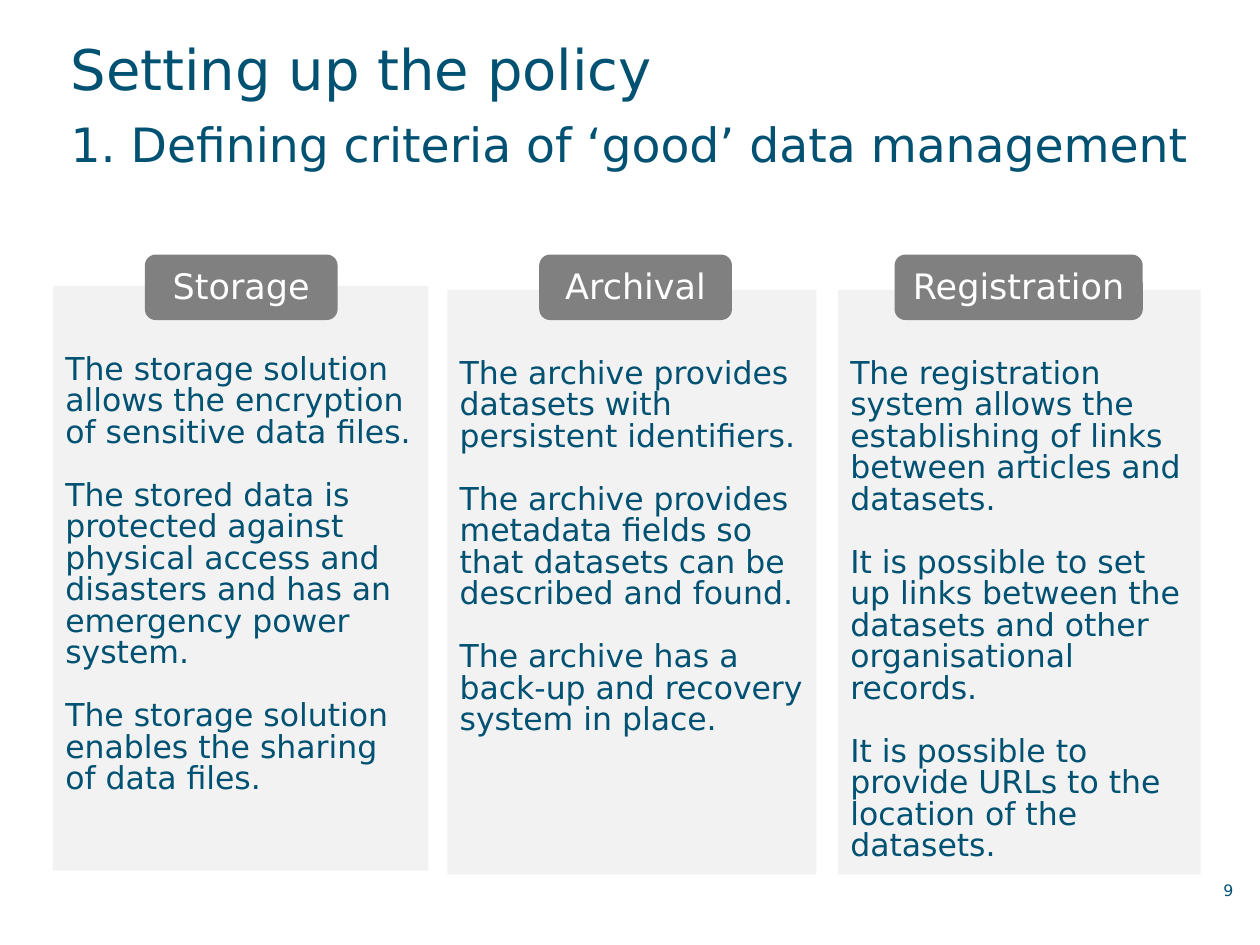
from dataclasses import dataclass

from pptx import Presentation
from pptx.dml.color import RGBColor as RGB
from pptx.enum.shapes import MSO_SHAPE as SHAPE
from pptx.enum.text import MSO_ANCHOR as ANCHOR, MSO_AUTO_SIZE as AUTO, PP_ALIGN as ALIGN
from pptx.util import Inches, Pt


@dataclass(frozen=True)
class Theme:
    font: str = "DejaVu Sans"
    ink: str = "005172"
    panel: str = "F2F2F2"
    label: str = "808080"
    label_ink: str = "FFFFFF"
    title_size: int = 32
    subtitle_size: int = 27
    label_size: int = 20
    body_size: int = 18
    number_size: int = 9


COLS, ROWS = 100, 75  # grid cells across and down the slide


class Deck:
    def __init__(self, theme):
        self.theme = theme
        self.prs = Presentation()
        self.prs.slide_width, self.prs.slide_height = Inches(10), Inches(7.5)
        self.slide = self.prs.slides.add_slide(self.prs.slide_layouts[5])

    def box(self, col, row, cols, rows):
        w, h = self.prs.slide_width / COLS, self.prs.slide_height / ROWS
        return [round(v) for v in (col * w, row * h, cols * w, rows * h)]

    def frame(self, sp, insets, anchor=ANCHOR.TOP):
        tf = sp.text_frame
        sides = ("margin_left", "margin_top", "margin_right", "margin_bottom")
        values = dict(zip(sides, map(Inches, insets)))
        values.update(word_wrap=True, auto_size=AUTO.NONE, vertical_anchor=anchor)
        for name, value in values.items():
            setattr(tf, name, value)
        return tf

    def format(self, p, **values):
        for name, value in values.items():
            setattr(p, name, value)

    def run(self, p, text, size, color):
        r = p.add_run()
        r.text = text
        for name, value in {"name": self.theme.font, "size": Pt(size)}.items():
            setattr(r.font, name, value)
        r.font.color.rgb = RGB.from_string(color)

    def shape(self, kind, area, fill):
        sp = self.slide.shapes.add_shape(kind, *self.box(*area))
        sp.shadow.inherit = False
        sp.fill.solid()
        sp.fill.fore_color.rgb = RGB.from_string(fill)
        sp.line.fill.background()
        return sp

    def title(self, area, heading, subheading):
        t, sp = self.theme, self.slide.shapes.title
        sp.left, sp.top, sp.width, sp.height = self.box(*area)
        p = self.frame(sp, (0.02, 0, 0.1, 0.35)).paragraphs[0]
        self.format(p, alignment=ALIGN.LEFT, line_spacing=Pt(40))
        self.run(p, heading, t.title_size, t.ink)
        p.add_line_break()
        self.run(p, subheading, t.subtitle_size, t.ink)

    def panel(self, area, texts):
        t = self.theme
        sp = self.shape(SHAPE.RECTANGLE, area, t.panel)
        # The top inset leaves two lines free below the label
        tf = self.frame(sp, (0.1, 0.55, 0.1, 0.05))
        for i, text in enumerate(texts):
            p = tf.add_paragraph() if i else tf.paragraphs[0]
            self.format(p, alignment=ALIGN.LEFT, line_spacing=Pt(t.body_size),
                        space_before=Pt(t.body_size if i else 0))
            self.run(p, text, t.body_size, t.ink)

    def label(self, area, text):
        t = self.theme
        sp = self.shape(SHAPE.ROUNDED_RECTANGLE, area, t.label)
        p = self.frame(sp, (0.1, 0.05, 0.1, 0.08), ANCHOR.MIDDLE).paragraphs[0]
        self.format(p, alignment=ALIGN.CENTER)
        self.run(p, text, t.label_size, t.label_ink)

    def number(self, area, text):
        t = self.theme
        sp = self.slide.shapes.add_textbox(*self.box(*area))
        p = self.frame(sp, (0.1, 0, 0.04, 0)).paragraphs[0]
        self.format(p, alignment=ALIGN.RIGHT, line_spacing=Pt(12))
        self.run(p, text, t.number_size, t.ink)


# Each criterion: label, label column and width, panel column, row and width, texts
CRITERIA = [
    ("Storage", (11.5, 15.3), (4.2, 22.7, 29.8), [
        "The storage solution allows the encryption of sensitive data files.",
        "The stored data is protected against physical access and disasters "
        "and has an emergency power system.",
        "The storage solution enables the sharing of data files.",
    ]),
    ("Archival", (42.8, 15.3), (35.5, 23, 29.3), [
        "The archive provides datasets with persistent identifiers.",
        "The archive provides metadata fields so that datasets can be "
        "described and found.",
        "The archive has a back-up and recovery system in place.",
    ]),
    ("Registration", (71, 19.7), (66.5, 23, 28.8), [
        "The registration system allows the establishing of links between "
        "articles and datasets.",
        "It is possible to set up links between the datasets and other "
        "organisational records.",
        "It is possible to provide URLs to the location of the datasets.",
    ]),
]
PANEL_ROWS, LABEL_ROW, LABEL_ROWS = 46.4, 20.2, 5.2


def main():
    deck = Deck(Theme())
    deck.title((5.4, 2.5, 92.3, 14.8), "Setting up the policy",
               "1. Defining criteria of ‘good’ data management")

    # Criteria panels, each with its label over the top edge
    for name, (label_col, label_cols), (col, row, cols), texts in CRITERIA:
        deck.panel((col, row, cols, PANEL_ROWS), texts)
        deck.label((label_col, LABEL_ROW, label_cols, LABEL_ROWS), name)

    # Slide number
    deck.number((93.2, 69.7, 5.1, 1.8), "9")
    deck.prs.save("out.pptx")


if __name__ == "__main__":
    main()
